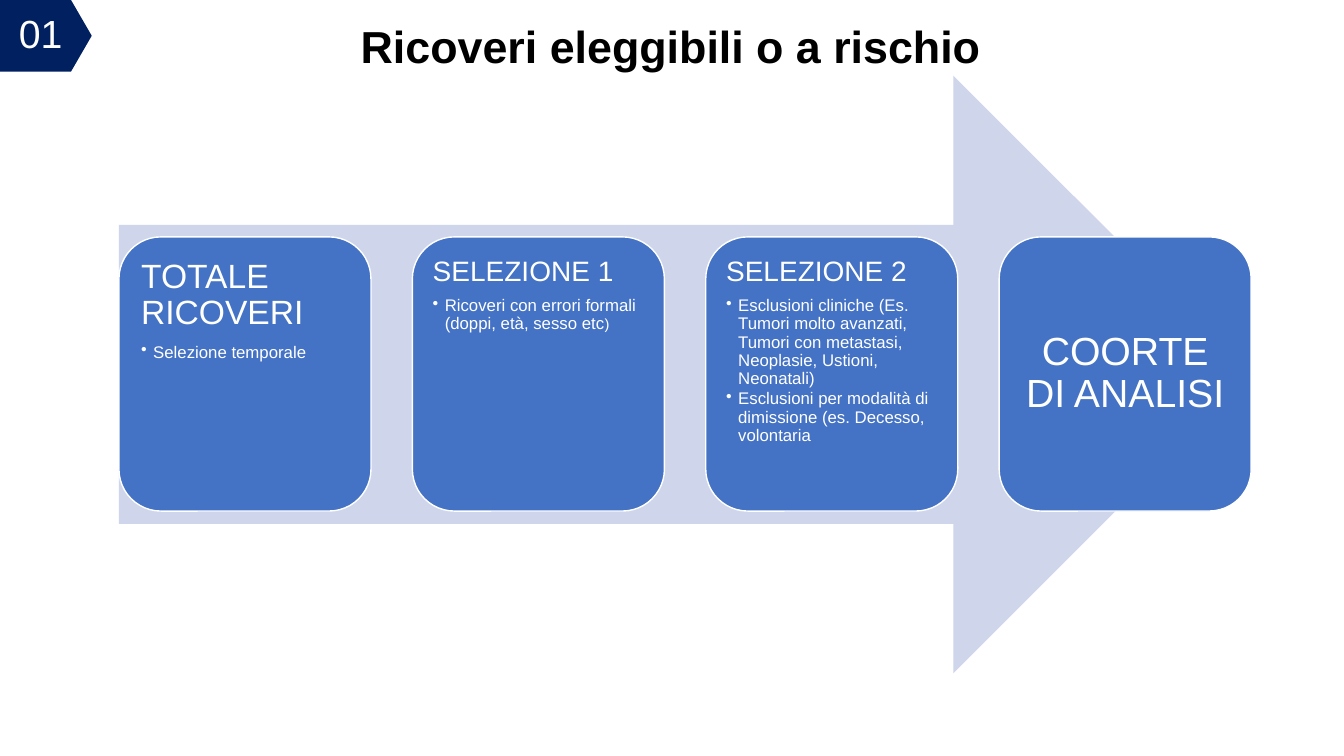
"""Build the slide on eligible or at-risk hospital admissions."""
from dataclasses import dataclass

from lxml import etree
from pptx import Presentation
from pptx import util as u
from pptx.dml.color import RGBColor
from pptx.enum import shapes, text


@dataclass(frozen=True)
class Theme:
    font: str = "Arial"
    navy: str = "002060"
    blue: str = "4472C4"
    pale: str = "CFD5EA"
    white: str = "FFFFFF"
    black: str = "000000"
    title: float = 32
    large: float = 28
    heading: float = 24
    subheading: float = 20
    body: float = 12
    small: float = 10.5
    spacing: float = 0.9


class SlideBuilder:
    def __init__(self, slide, theme):
        self.slide = slide
        self.theme = theme

    def shape(self, kind, box, fill, outline=None):
        shape = self.slide.shapes.add_shape(kind, *map(u.Inches, box))
        shape.shadow.inherit = False
        shape.fill.solid()
        shape.fill.fore_color.rgb = RGBColor.from_string(fill)
        if outline:
            shape.line.color.rgb = RGBColor.from_string(outline)
            shape.line.width = u.Pt(1)
        else:
            shape.line.fill.background()
        return shape

    def frame(self, shape, anchor, inset=None):
        frame = shape.text_frame
        frame.word_wrap = True
        frame.vertical_anchor = anchor
        if inset is not None:
            frame.margin_left = frame.margin_right = u.Inches(inset)
            frame.margin_top = frame.margin_bottom = u.Inches(inset)
        return frame

    def add_runs(self, paragraph, runs, align, color, bold=False, after=0):
        paragraph.alignment = align
        paragraph.line_spacing = self.theme.spacing
        paragraph.space_after = u.Pt(after)
        for words, size in runs:
            run = paragraph.add_run()
            run.text = words
            run.font.name = self.theme.font
            run.font.size = u.Pt(size)
            run.font.bold = bold
            run.font.color.rgb = RGBColor.from_string(color)

    def bullet(self, paragraph):
        paragraph.level = 1
        properties = paragraph._p.get_or_add_pPr()
        properties.set("marL", str(u.Inches(0.12)))
        properties.set("indent", str(-u.Inches(0.12)))
        namespace = properties.nsmap["a"]
        mark = etree.SubElement(properties, f"{{{namespace}}}buChar")
        mark.set("char", "•")

    def badge(self, number, box):
        badge = self.shape(shapes.MSO_SHAPE.PENTAGON, box, self.theme.navy)
        badge.adjustments[0] = 0.289
        frame = self.frame(badge, text.MSO_ANCHOR.MIDDLE)
        self.add_runs(frame.paragraphs[0], [(number, self.theme.large)],
                      text.PP_ALIGN.CENTER, self.theme.white)

    def title(self, words, box):
        title = self.slide.shapes.add_textbox(*map(u.Inches, box))
        frame = self.frame(title, text.MSO_ANCHOR.BOTTOM)
        self.add_runs(frame.paragraphs[0], [(words, self.theme.title)],
                      text.PP_ALIGN.CENTER, self.theme.black, bold=True)

    def step(self, box, heading, size, inset, bullets):
        theme = self.theme
        card = self.shape(shapes.MSO_SHAPE.ROUNDED_RECTANGLE, box, theme.blue, theme.white)
        anchor = text.MSO_ANCHOR.TOP if bullets else text.MSO_ANCHOR.MIDDLE
        align = text.PP_ALIGN.LEFT if bullets else text.PP_ALIGN.CENTER
        frame = self.frame(card, anchor, inset)
        self.add_runs(frame.paragraphs[0], [(heading, size)], align, theme.white,
                      after=0.35 * size)
        for runs in bullets:
            paragraph = frame.add_paragraph()
            self.bullet(paragraph)
            self.add_runs(paragraph, runs, align, theme.white, after=0.15 * theme.body)


def main():
    theme = Theme()
    deck = Presentation()
    deck.slide_width, deck.slide_height = u.Inches(13.33), u.Inches(7.5)
    builder = SlideBuilder(deck.slides.add_slide(deck.slide_layouts[6]), theme)

    builder.badge("01", (0, 0, 0.91, 0.71))
    builder.title("Ricoveri eleggibili o a rischio", (0.41, -0.12, 12.49, 0.9))
    builder.shape(shapes.MSO_SHAPE.RIGHT_ARROW, (1.18, 0.75, 11.24, 5.93), theme.pale)

    steps = [
        ("TOTALE RICOVERI", theme.heading, 0.1, [[("Selezione temporale", theme.body)]]),
        ("SELEZIONE 1", theme.subheading, 0.08, [
            [("Ricoveri con errori formali (doppi, età, sesso etc", theme.body),
             (")", theme.small)],
        ]),
        ("SELEZIONE 2", theme.subheading, 0.08, [
            [("Esclusioni cliniche (Es. Tumori molto avanzati, Tumori con metastasi, "
              "Neoplasie, Ustioni, Neonatali)", theme.body)],
            [("Esclusioni per modalità di dimissione (es. Decesso, volontaria", theme.body)],
        ]),
        ("COORTE DI ANALISI", theme.large, 0.12, []),
    ]
    for index, step in enumerate(steps):
        builder.step((1.18 + 2.91 * index, 2.35, 2.5, 2.72), *step)

    deck.save("out.pptx")


if __name__ == "__main__":
    main()
